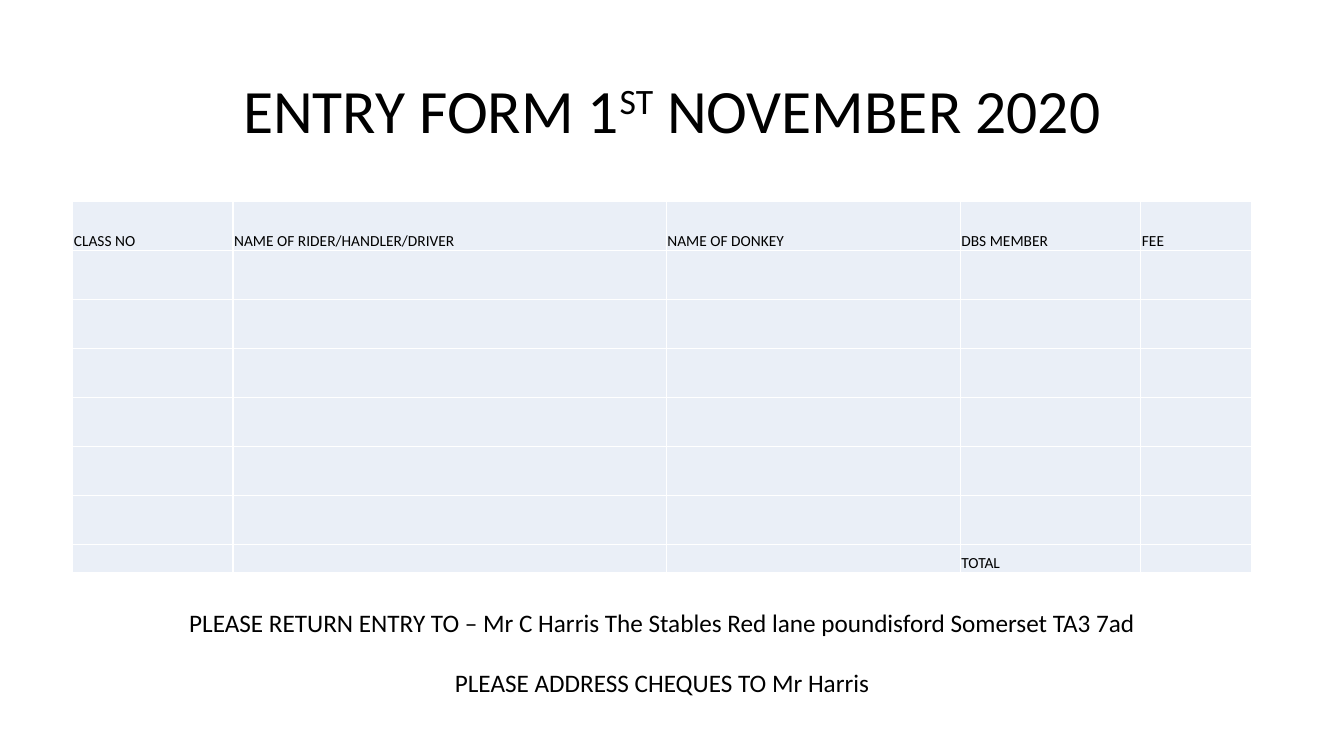
from lxml.etree import SubElement
from pptx import Presentation
from pptx.dml.color import RGBColor
from pptx.enum.text import MSO_ANCHOR as ANCHOR, MSO_AUTO_SIZE as FIT, PP_ALIGN as ALIGN
from pptx.oxml.ns import qn
from pptx.util import Pt

BLACK = RGBColor(0x00, 0x00, 0x00)
WHITE = RGBColor(0xFF, 0xFF, 0xFF)
PALE_BLUE = RGBColor(0xEA, 0xEF, 0xF7)

COLUMNS = [
    ("CLASS NO", 114.5),
    ("NAME OF RIDER/HANDLER/DRIVER", 309.5),
    ("NAME OF DONKEY", 210),
    ("DBS MEMBER", 129),
    ("FEE", 79),
]
ROW_HEIGHTS = [35] * 7 + [20.5]
TOTAL_COLUMN = 3
CELL_SIZE = 11
RETURN_LINES = [
    "PLEASE RETURN ENTRY TO – Mr C Harris The Stables Red lane poundisford Somerset TA3 7ad",
    "PLEASE ADDRESS CHEQUES TO Mr Harris",
]


def apply(obj, formats):
    for name, value in formats.items():
        setattr(obj, name, value)


def add_run(p, text, size):
    r = p.add_run()
    r.text = text
    apply(r.font, {"name": "Calibri", "size": Pt(size), "bold": False})
    r.font.color.rgb = BLACK
    return r


def add_title(s):
    sp = s.shapes.title
    apply(sp, {"left": Pt(66), "top": Pt(28.75), "width": Pt(828), "height": Pt(104.4)})
    tf = sp.text_frame
    apply(tf, {"vertical_anchor": ANCHOR.MIDDLE, "word_wrap": True, "auto_size": FIT.NONE})
    p = tf.paragraphs[0]
    apply(p, {"alignment": ALIGN.CENTER, "line_spacing": 0.9})
    add_run(p, "ENTRY FORM 1", 44)
    ordinal = add_run(p, "ST", 44)
    ordinal.font._element.set("baseline", "30000")
    add_run(p, " NOVEMBER 2020", 44)


def add_borders(cell):
    tcPr = cell._tc.get_or_add_tcPr()
    for side in ("lnL", "lnR", "lnT", "lnB"):
        ln = SubElement(tcPr, qn(f"a:{side}"), w=str(Pt(1)))
        fill = SubElement(ln, qn("a:solidFill"))
        SubElement(fill, qn("a:srgbClr"), val=str(WHITE))


def format_cell(cell, text):
    add_borders(cell)
    cell.fill.solid()
    cell.fill.fore_color.rgb = PALE_BLUE
    apply(cell, {
        "vertical_anchor": ANCHOR.BOTTOM,
        "margin_left": Pt(0.75),
        "margin_right": Pt(0.75),
        "margin_top": Pt(0.75),
        "margin_bottom": Pt(0),
    })
    p = cell.text_frame.paragraphs[0]
    if text:
        add_run(p, text, CELL_SIZE)
    else:
        SubElement(p._p, qn("a:endParaRPr"), sz=str(CELL_SIZE * 100))


def add_entry_table(s):
    width = sum(w for _, w in COLUMNS)
    frame = s.shapes.add_table(len(ROW_HEIGHTS), len(COLUMNS), Pt(52),
                               Pt(144), Pt(width), Pt(sum(ROW_HEIGHTS)))
    table = frame.table
    apply(table, {"first_row": False, "horz_banding": False})
    for column, (_, w) in zip(table.columns, COLUMNS):
        column.width = Pt(w)
    for row, height in zip(table.rows, ROW_HEIGHTS):
        row.height = Pt(height)
    texts = {(0, i): heading for i, (heading, _) in enumerate(COLUMNS)}
    texts[len(ROW_HEIGHTS) - 1, TOTAL_COLUMN] = "TOTAL"
    for i, row in enumerate(table.rows):
        for j, cell in enumerate(row.cells):
            format_cell(cell, texts.get((i, j)))


def add_return_note(s):
    sp = s.shapes.add_textbox(Pt(52), Pt(430), Pt(842), Pt(72.7))
    tf = sp.text_frame
    apply(tf, {"word_wrap": True, "auto_size": FIT.SHAPE_TO_FIT_TEXT})
    for i, line in enumerate(RETURN_LINES):
        p = tf.add_paragraph() if i else tf.paragraphs[0]
        apply(p, {"alignment": ALIGN.CENTER, "space_before": Pt(21.5 if i else 0)})
        add_run(p, line, 18)


def main():
    prs = Presentation()
    apply(prs, {"slide_width": Pt(960), "slide_height": Pt(540)})
    s = prs.slides.add_slide(prs.slide_layouts.get_by_name("Title Only"))
    add_title(s)
    add_entry_table(s)
    add_return_note(s)
    prs.save("out.pptx")


if __name__ == "__main__":
    main()
